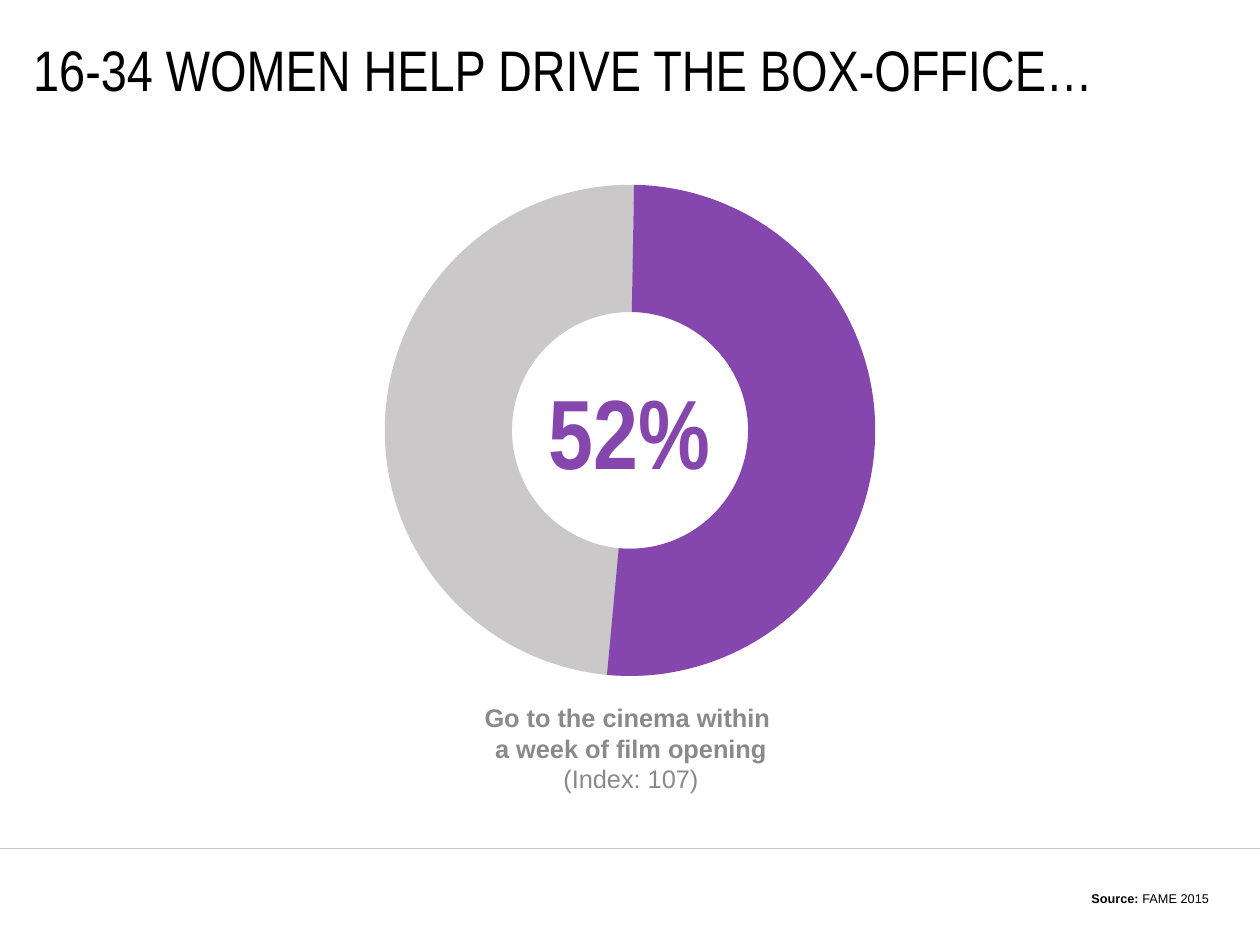
from dataclasses import dataclass

from lxml import etree
from pptx import Presentation
from pptx.dml.color import RGBColor
from pptx.enum.shapes import MSO_CONNECTOR, MSO_SHAPE
from pptx.enum.text import MSO_ANCHOR, PP_ALIGN
from pptx.oxml.ns import qn
from pptx.util import Pt

LEFT, CENTER, RIGHT = PP_ALIGN.LEFT, PP_ALIGN.CENTER, PP_ALIGN.RIGHT
MIDDLE, BOTTOM = MSO_ANCHOR.MIDDLE, MSO_ANCHOR.BOTTOM
BLOCK_ARC = MSO_SHAPE.BLOCK_ARC
STRAIGHT = MSO_CONNECTOR.STRAIGHT


@dataclass(frozen=True)
class Theme:
    """Colours, fonts and type sizes of the slide."""
    black: RGBColor = RGBColor(0x00, 0x00, 0x00)
    purple: RGBColor = RGBColor(0x85, 0x47, 0xAD)
    silver: RGBColor = RGBColor(0xCA, 0xC8, 0xC8)
    grey: RGBColor = RGBColor(0x8A, 0x8A, 0x8D)
    narrow: str = "Arial Narrow"
    sans: str = "Arial"
    title: int = 36
    figure: int = 62
    label: int = 16
    source: int = 8


THEME = Theme()


def add_text(slide, box, paragraphs, font, size, color, align,
             anchor=MIDDLE, inset=(7.2, 3.6)):
    """Place paragraphs of (text, bold) runs in a box; a newline breaks the line."""
    tf = slide.shapes.add_textbox(*map(Pt, box)).text_frame
    tf.word_wrap = True
    tf.vertical_anchor = anchor
    tf.margin_left = tf.margin_right = Pt(inset[0])
    tf.margin_top = tf.margin_bottom = Pt(inset[1])
    for i, runs in enumerate(paragraphs):
        p = tf.add_paragraph() if i else tf.paragraphs[0]
        p.alignment = align
        for text, bold in runs:
            for j, line in enumerate(text.split("\n")):
                if j:
                    p.add_line_break()
                r = p.add_run()
                r.text = line
                r.font.name = font
                r.font.size = Pt(size)
                r.font.bold = bold
                r.font.color.rgb = color


def add_arc(slide, box, start, end, color):
    """Draw a ring segment clockwise between two angles in degrees."""
    sp = slide.shapes.add_shape(BLOCK_ARC, *map(Pt, box))
    for i, value in enumerate((start * 0.6, end * 0.6, 0.259)):
        sp.adjustments[i] = value
    sp.shadow.inherit = False
    sp.fill.solid()
    sp.fill.fore_color.rgb = color
    sp.line.fill.background()


def add_title(slide, box):
    """Write the slide heading."""
    add_text(slide, box, [[("16-34 WOMEN HELP DRIVE THE BOX-OFFICE…", False)]],
             THEME.narrow, THEME.title, THEME.black, LEFT, inset=(0, 0))


def add_ring(slide, box):
    """Draw the two-part ring with its percentage in the middle."""
    x, y, w, h = box
    add_arc(slide, (x + 0.4, y, w, h), 81.89, 270.87, THEME.silver)
    fw, fh = 160, 82
    add_text(slide, (x + (w - fw) / 2, y + (h - fh) / 2, fw, fh), [[("52%", True)]],
             THEME.narrow, THEME.figure, THEME.purple, CENTER)
    add_arc(slide, box, 271.02, 95.31, THEME.purple)


def add_label(slide, box):
    """Write the statement below the ring."""
    add_text(slide, box,
             [[("Go to the cinema within \na week of film opening", True)],
              [("(Index: 107)", False)]],
             THEME.sans, THEME.label, THEME.grey, CENTER)


def add_footer(slide, box):
    """Draw the footer rule and the source line."""
    x, y, w, h = box
    rule = slide.shapes.add_connector(STRAIGHT, Pt(x), Pt(y), Pt(x + w), Pt(y))
    rule.line.color.rgb = THEME.silver
    rule.line.width = Pt(0.5)
    etree.SubElement(rule._element.spPr, qn("a:effectLst"))
    tw, th = 422.5, 17.3
    add_text(slide, (x + w - tw - 25, y + 22.3, tw, th),
             [[("Source: ", True), ("FAME 2015", False)]],
             THEME.sans, THEME.source, THEME.black, RIGHT, BOTTOM)


def main():
    """Build and save the slide."""
    prs = Presentation()
    width, height = 793.75, 595.25
    prs.slide_width, prs.slide_height = Pt(width), Pt(height)
    slide = prs.slides.add_slide(prs.slide_layouts[6])
    add_title(slide, (20.9, 27.2, 733, 32.4))
    add_ring(slide, (242, 116.4, 309.4, 309.4))
    add_label(slide, (166, 438.5, 463, 65.5))
    add_footer(slide, (0, 534.7, width, height - 534.7))
    prs.save("out.pptx")


if __name__ == "__main__":
    main()
